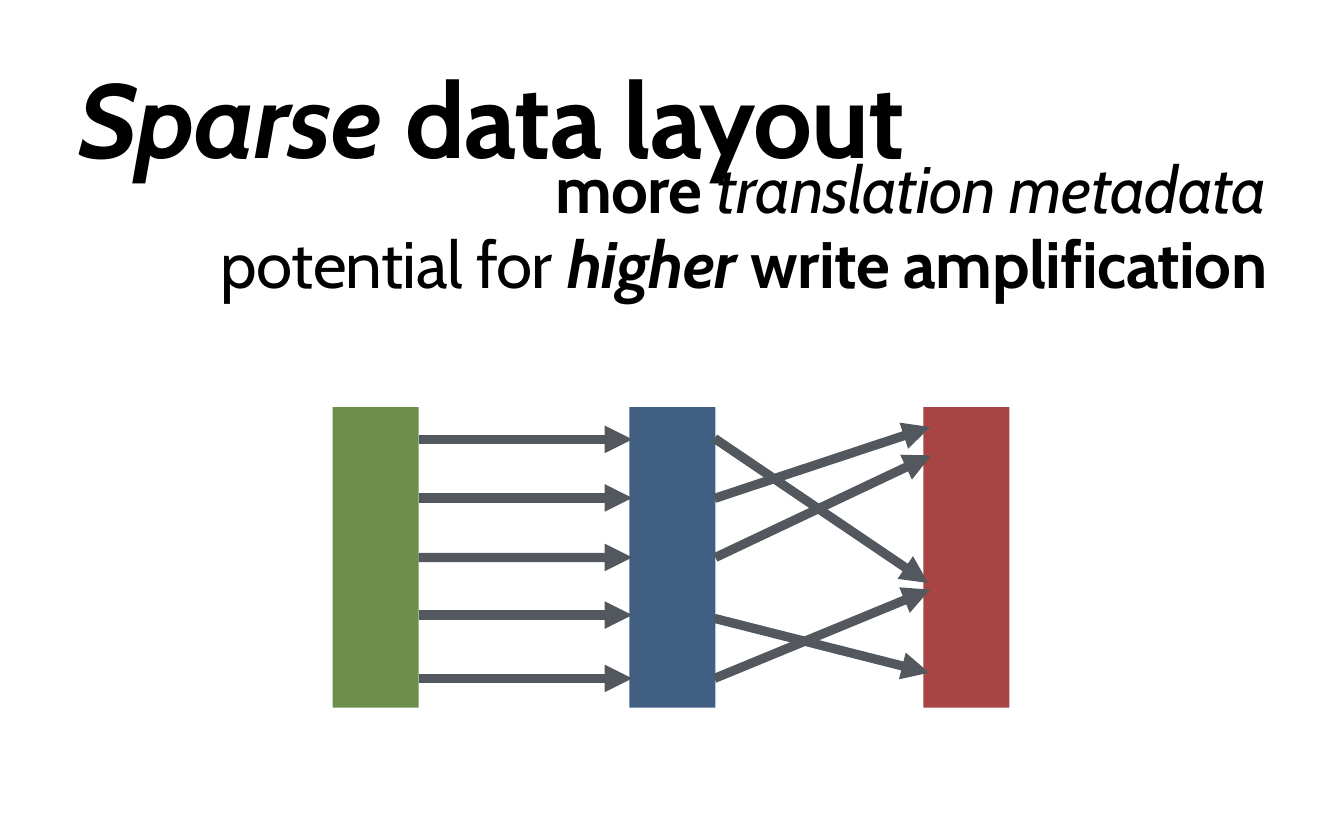
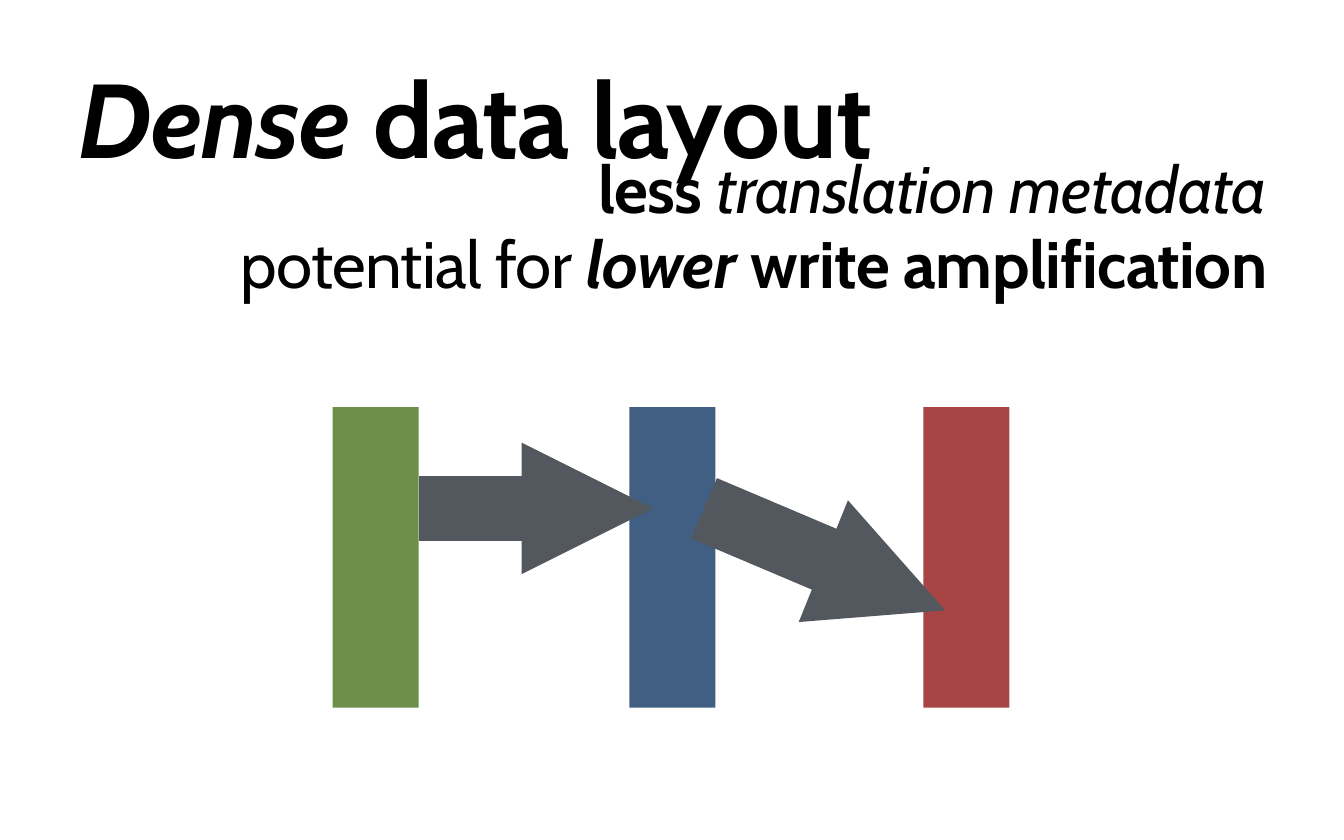
from dataclasses import dataclass
from math import cos, radians, sin

from lxml import etree
from pptx import Presentation
from pptx.dml.color import RGBColor
from pptx.enum.shapes import MSO_CONNECTOR, MSO_SHAPE
from pptx.enum.text import MSO_ANCHOR, MSO_AUTO_SIZE, PP_ALIGN
from pptx.oxml.ns import qn
from pptx.util import Inches, Pt

STRAIGHT = MSO_CONNECTOR.STRAIGHT
RECTANGLE = MSO_SHAPE.RECTANGLE
TOP, MIDDLE = MSO_ANCHOR.TOP, MSO_ANCHOR.MIDDLE
LEFT, RIGHT = PP_ALIGN.LEFT, PP_ALIGN.RIGHT
FIT_SHAPE = MSO_AUTO_SIZE.SHAPE_TO_FIT_TEXT
RIGHT_SITE = 3


@dataclass(frozen=True)
class Theme:
    font: str = "Cabin"
    text: str = "000000"
    arrow: str = "53585F"
    green: str = "6C9049"
    blue: str = "405F82"
    red: str = "A74545"
    title_size: int = 80
    note_size: int = 50
    arrow_width: int = 7
    block_width: int = 50


THEME = Theme()

# Run styles
PLAIN = {"bold": False, "italic": False}
BOLD = {"bold": True, "italic": False}
ITALIC = {"bold": False, "italic": True}
BOLD_ITALIC = {"bold": True, "italic": True}

# Shared geometry, in inches
BAR_TOP, BAR_WIDTH, BAR_HEIGHT = 4.31, 0.91, 3.18
BARS = [(3.52, THEME.green), (6.66, THEME.blue), (9.77, THEME.red)]
NOTE_RIGHT = 13.41
HEAD_SIZE = 1.39


class Deck:
    def __init__(self, theme):
        self.theme = theme
        self.prs = Presentation()
        self.prs.slide_width, self.prs.slide_height = Inches(14.22), Inches(8.89)
        self.s = None

    def add_slide(self):
        self.s = self.prs.slides.add_slide(self.prs.slide_layouts[6])

    def text(self, box, runs, size, align=LEFT, anchor=TOP, inset=0, spacing=1.0):
        """Add one line of text; runs are (text, style) pairs."""
        tf = self.s.shapes.add_textbox(*map(Inches, box)).text_frame
        frame = {"word_wrap": False, "auto_size": FIT_SHAPE, "vertical_anchor": anchor}
        for side in ("left", "top", "right", "bottom"):
            frame[f"margin_{side}"] = Inches(inset)
        for name, value in frame.items():
            setattr(tf, name, value)
        p = tf.paragraphs[0]
        p.alignment, p.line_spacing = align, spacing
        for text, style in runs:
            r = p.add_run()
            r.text = text
            values = {"name": self.theme.font, "size": Pt(size), **style}
            for name, value in values.items():
                setattr(r.font, name, value)
            r.font.color.rgb = RGBColor.from_string(self.theme.text)
            r.font._element.set("spc", str(-size))  # tracking of -1 %

    def title(self, word, width):
        runs = [(word, BOLD_ITALIC), (" data layout", BOLD)]
        self.text((0.77, 0.58, width, 1.3), runs, self.theme.title_size,
                  anchor=MIDDLE, inset=0.06)

    def note(self, top, width, runs):
        self.text((NOTE_RIGHT - width, top, width, 0.87), runs,
                  self.theme.note_size, align=RIGHT, spacing=0.8)

    def paint(self, shape, color):
        shape.fill.solid()
        shape.fill.fore_color.rgb = RGBColor.from_string(color)
        shape.line.fill.background()
        shape.shadow.inherit = False

    def bar(self, left, color):
        sp = self.s.shapes.add_shape(
            RECTANGLE, *map(Inches, (left, BAR_TOP, BAR_WIDTH, BAR_HEIGHT)))
        self.paint(sp, color)
        return sp

    def line(self, start, end, width, head=False):
        c = self.s.shapes.add_connector(STRAIGHT, *map(Inches, (*start, *end)))
        c.line.color.rgb = RGBColor.from_string(self.theme.arrow)
        c.line.width = Pt(width)
        if head:
            etree.SubElement(c.line._get_or_add_ln(), qn("a:tailEnd"), type="triangle")
        etree.SubElement(c._element.spPr, qn("a:effectLst"))
        return c

    def block_arrow(self, start, end, tip, angle):
        """Add a thick shaft and a triangular head that points along angle."""
        self.line(start, end, self.theme.block_width)
        dx, dy = (HEAD_SIZE * f(radians(angle)) for f in (cos, sin))
        x, y = tip[0] - dx, tip[1] - dy
        corners = [(x - dy / 2, y + dx / 2), (x + dy / 2, y - dx / 2)]
        fb = self.s.shapes.build_freeform(*map(Inches, tip))
        fb.add_line_segments([tuple(map(Inches, c)) for c in corners], close=True)
        self.paint(fb.convert_to_shape(), self.theme.arrow)

    def layout_slide(self, word, title_width, amount, amount_width, level, level_width):
        """Add a slide with its headings and three bars; return the bars."""
        self.add_slide()
        bars = [self.bar(*bar) for bar in BARS]
        self.title(word, title_width)
        self.note(1.73, amount_width,
                  [(amount, BOLD), (" translation metadata", ITALIC)])
        self.note(2.52, level_width,
                  [("potential for ", PLAIN), (level, BOLD_ITALIC),
                   (" write amplification", BOLD)])
        return bars


def sparse_slide(deck):
    green, blue, _ = deck.layout_slide("Sparse", 9.3, "more", 8.32, "higher", 12.15)
    width = deck.theme.arrow_width

    # Straight arrows, green to blue
    straight = [deck.line((4.43, y), (6.69, y), width, head=True)
                for y in (4.65, 5.27, 5.9, 6.51, 7.18)]
    straight[2].begin_connect(green, RIGHT_SITE)

    # Scattered arrows, blue to red
    targets = [(9.82, 6.17), (9.84, 4.52), (9.85, 4.82), (9.83, 7.12), (9.84, 6.24)]
    pitch = (7.18 - 4.64) / (len(targets) - 1)
    scattered = [deck.line((7.56, 4.64 + i * pitch), target, width, head=True)
                 for i, target in enumerate(targets)]
    scattered[2].begin_connect(blue, RIGHT_SITE)


def dense_slide(deck):
    deck.layout_slide("Dense", 9.04, "less", 7.9, "lower", 11.93)
    deck.block_arrow((4.43, 5.38), (6.16, 5.38), tip=(6.91, 5.38), angle=0)
    deck.block_arrow((7.45, 5.38), (9.22, 6.13), tip=(10, 6.46), angle=22)


def main():
    deck = Deck(THEME)
    sparse_slide(deck)
    dense_slide(deck)
    deck.prs.save("out.pptx")


if __name__ == "__main__":
    main()
